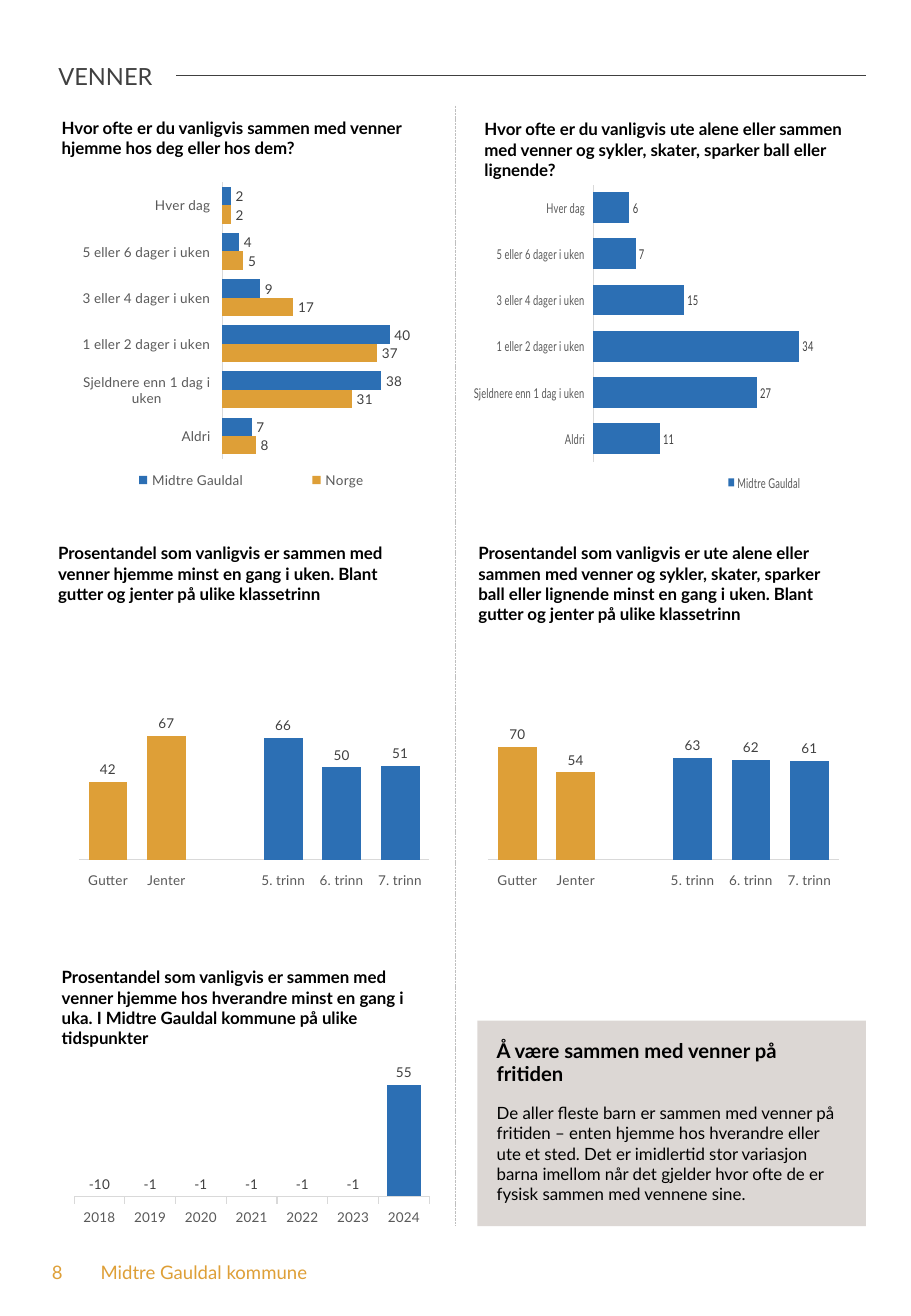
import pptx
import pptx.util
import pptx.chart.data
import pptx.dml.color
import pptx.enum.chart
import pptx.enum.shapes
import pptx.enum.dml
import pptx.enum.text
import pptx.oxml
import pptx.oxml.ns
from lxml import etree

Inches, Pt = pptx.util.Inches, pptx.util.Pt
Kind = pptx.enum.chart.XL_CHART_TYPE
Tick = pptx.enum.chart.XL_TICK_MARK
qn = pptx.oxml.ns.qn
BLUE, GOLD, DARK, GREY, BLACK = "2C6FB4", "DE9F37", "404040", "595959", "000000"
DAYS = ["Aldri", "Sjeldnere enn 1 dag i uken", "1 eller 2 dager i uken",
        "3 eller 4 dager i uken", "5 eller 6 dager i uken", "Hver dag"]
GROUPS = ["Gutter", "Jenter", "", "5. trinn", "6. trinn", "7. trinn"]
YEARS = [str(year) for year in range(2018, 2025)]
TOWN = "Midtre Gauldal"


def rgb(code):
    """Return the colour for a hex string."""
    return pptx.dml.color.RGBColor.from_string(code)


def put(item, vals):
    """Set each attribute in a dict on an item."""
    for name, val in vals.items():
        setattr(item, name, val)


def paint(part, code):
    """Give a fill or line format a solid colour."""
    fill = part.fill
    fill.solid()
    fill.fore_color.rgb = rgb(code)


def style(font, size, code, bold=False):
    """Format a font."""
    put(font, {"name": "Lato", "size": Pt(size), "bold": bold})
    font.color.rgb = rgb(code)


def write(para, text, size, code, bold=False):
    """Add a styled run to a paragraph."""
    run = para.add_run()
    run.text = text
    style(run.font, size, code, bold)


def frame(shape):
    """Prepare the text frame of a shape and return it."""
    text = shape.text_frame
    put(text, {"word_wrap": True,
               "auto_size": pptx.enum.text.MSO_AUTO_SIZE.NONE,
               "vertical_anchor": pptx.enum.text.MSO_ANCHOR.TOP})
    return text


def label(slide, box, text, size, code, bold=False, tab=None):
    """Add a text box, with a tab stop if one is given."""
    para = frame(slide.shapes.add_textbox(*map(Inches, box))).paragraphs[0]
    if tab:
        tabs = etree.SubElement(para._p.get_or_add_pPr(), qn("a:tabLst"))
        etree.SubElement(tabs, qn("a:tab"), pos=str(Inches(tab)), algn="l")
    write(para, text, size, code, bold)


def rule(slide, ends, code, width, dash=None):
    """Draw a straight line without shadow."""
    kind = pptx.enum.shapes.MSO_CONNECTOR.STRAIGHT
    link = slide.shapes.add_connector(kind, *map(Inches, ends))
    link.line.width = Pt(width)
    paint(link.line, code)
    if dash:
        link.line.dash_style = dash
    etree.SubElement(link._element.spPr, qn("a:effectLst"))


def layout(node, spot, box, inner=False):
    """Place a plot area or legend by fractions of its chart."""
    for old in node.findall(qn("c:layout")):
        node.remove(old)
    base = etree.Element(qn("c:layout"))
    hand = etree.SubElement(base, qn("c:manualLayout"))
    vals = {"layoutTarget": "inner"} if inner else {}
    vals.update(xMode="edge", yMode="edge")
    vals.update(zip("xywh", map(str, box)))
    for name, val in vals.items():
        etree.SubElement(hand, qn("c:" + name), val=val)
    node.insert(spot, base)


def graph(slide, box, kind, cats, rows, top, plot, legend=None,
          tick=Tick.NONE, points=()):
    """Add a bar or column chart to the given box."""
    data = pptx.chart.data.CategoryChartData(number_format="0")
    data.categories = cats
    for name, vals, _ in rows:
        data.add_series(name, vals)
    chart = slide.shapes.add_chart(kind, *map(Inches, box), data).chart
    put(chart, {"has_title": False, "has_legend": bool(legend)})
    style(chart.font, 8, BLACK)
    axis = chart.category_axis
    put(axis, {"major_tick_mark": tick, "has_major_gridlines": False,
               "tick_label_position": pptx.enum.chart.XL_TICK_LABEL_POSITION.LOW})
    style(axis.tick_labels.font, 8, GREY)
    axis.format.line.width = Pt(0.75)
    paint(axis.format.line, "D9D9D9")
    put(chart.value_axis, {"visible": False, "has_major_gridlines": False,
                           "minimum_scale": 0, "maximum_scale": top})
    bars = chart.plots[0]
    put(bars, {"gap_width": 50, "vary_by_categories": False,
               "overlap": -10 if kind == Kind.COLUMN_CLUSTERED else 0})
    for series, (_, _, code) in zip(bars.series, rows):
        series.invert_if_negative = False
        paint(series.format, code)
        for spot in points:
            paint(series.points[spot].format, GOLD)
        tags = series.data_labels
        put(tags, {"show_value": True, "number_format": "0",
                   "number_format_is_linked": False})
        style(tags.font, 8, DARK)
    layout(chart._chartSpace.chart.plotArea, 0, plot, True)
    if legend:
        put(chart.legend, {"position": pptx.enum.chart.XL_LEGEND_POSITION.TOP,
                           "include_in_layout": False})
        style(chart.legend.font, 8, GREY)
        layout(chart.legend._element, 1, legend)


def panel(slide, box, text, shift, size, *args, **opts):
    """Place a heading in the box and a chart shifted from its corner."""
    label(slide, box, text, 10, BLACK, True)
    spot = (box[0] + shift[0], box[1] + shift[1])
    graph(slide, spot + size, *args, **opts)


def header(slide, box):
    """Place the title and the line beside it."""
    x, y, w, h = box
    title = slide.shapes.title
    put(title, dict(zip(("left", "top", "width", "height"), map(Inches, box))))
    para = frame(title).paragraphs[0]
    para.alignment = pptx.enum.text.PP_ALIGN.LEFT
    write(para, "VENNER", 14, DARK)
    rule(slide, (x + 1.07, y + 0.16, x + w + 0.02, y + 0.16), DARK, 0.3)


def note(slide, box):
    """Place the shaded summary."""
    kind = pptx.enum.shapes.MSO_SHAPE.RECTANGLE
    shape = slide.shapes.add_shape(kind, *map(Inches, box))
    shape.shadow.inherit = False
    paint(shape, "A89D94")
    shape.line.fill.background()
    tint = shape._element.spPr.find(".//" + qn("a:srgbClr"))
    etree.SubElement(tint, qn("a:alpha"), val="40000")
    text = frame(shape)
    put(text, {"margin_" + side: Inches(0.16)
               for side in ("left", "top", "right", "bottom")})
    head, body = text.paragraphs[0], text.add_paragraph()
    for para in (head, body):
        put(para, {"alignment": pptx.enum.text.PP_ALIGN.LEFT, "space_after": Pt(4)})
    head.line_spacing = Pt(13.5)
    body.space_before = Pt(6)
    write(head, "Å være sammen med venner på fritiden", 12, BLACK, True)
    write(body, "De aller fleste barn er sammen med venner på fritiden – enten hjemme hos hverandre eller ute et sted. Det er imidlertid stor variasjon barna imellom når det gjelder hvor ofte de er fysisk sammen med vennene sine.", 10, BLACK)


def main():
    """Build the page and save it."""
    deck = pptx.Presentation()
    put(deck, {"slide_width": Inches(7.5), "slide_height": Inches(10.83)})
    slide = deck.slides.add_slide(deck.slide_layouts[5])
    rule(slide, (3.75, 0.87, 3.75, 10.09), "BFBFBF", 0.5,
         pptx.enum.dml.MSO_LINE.SQUARE_DOT)
    header(slide, (0.38, 0.46, 6.73, 0.34))
    wide, low = (2.98, 2.85), (2.98, 1.77)
    panel(slide, (0.41, 0.92, 3.26, 0.44),
          "Hvor ofte er du vanligvis sammen med venner hjemme hos deg eller hos dem?",
          (0.14, 0.38), wide, Kind.BAR_CLUSTERED, DAYS,
          [("Norge", [8, 31, 37, 17, 5, 2], GOLD),
           (TOWN, [7, 38, 40, 9, 4, 2], BLUE)],
          45, (0.43, 0.07, 0.52, 0.8), legend=(0.02, 0.89, 0.98, 0.08))
    panel(slide, (3.89, 0.93, 3.26, 0.61),
          "Hvor ofte er du vanligvis ute alene eller sammen med venner og sykler, skater, sparker ball eller lignende?",
          (0.01, 0.39), wide, Kind.BAR_CLUSTERED, DAYS,
          [(TOWN, [11, 27, 34, 15, 7, 6], BLUE)],
          40, (0.43, 0.07, 0.97, 0.8), legend=(0.43, 0.89, 0.98, 0.08))
    for x, h, shift, text, vals, top in (
            (0.38, 0.61, 0.18, "Prosentandel som vanligvis er sammen med venner hjemme minst en gang i uken. Blant gutter og jenter på ulike klassetrinn",
             [42, 67, None, 66, 50, 51], 70),
            (3.84, 0.94, 0.09, "Prosentandel som vanligvis er ute alene eller sammen med venner og sykler, skater, sparker ball eller lignende minst en gang i uken. Blant gutter og jenter på ulike klassetrinn",
             [70, 54, None, 63, 62, 61], 80)):
        panel(slide, (x, 4.42, 3.15, h), text, (shift, 1.15), low,
              Kind.COLUMN_CLUSTERED, GROUPS, [("Series 1", vals, BLUE)],
              top, (0.03, 0.25, 0.97, 0.6), points=(0, 1))
    panel(slide, (0.41, 7.91, 3.21, 0.77),
          "Prosentandel som vanligvis er sammen med venner hjemme hos hverandre minst en gang i uka. I Midtre Gauldal kommune på ulike tidspunkter",
          (0.11, 0.56), (3.02, 1.62), Kind.COLUMN_CLUSTERED, YEARS,
          [("Series 1", [-10] + [-1] * 5 + [55], BLUE)],
          60, (0.03, 0.23, 0.97, 0.62), tick=Tick.OUTSIDE)
    note(slide, (3.93, 8.4, 3.2, 1.69))
    label(slide, (0.33, 10.33, 6.66, 0.29), "8\tMidtre Gauldal kommune", 11, GOLD, tab=0.4)
    deck.save("out.pptx")


if __name__ == "__main__":
    main()
